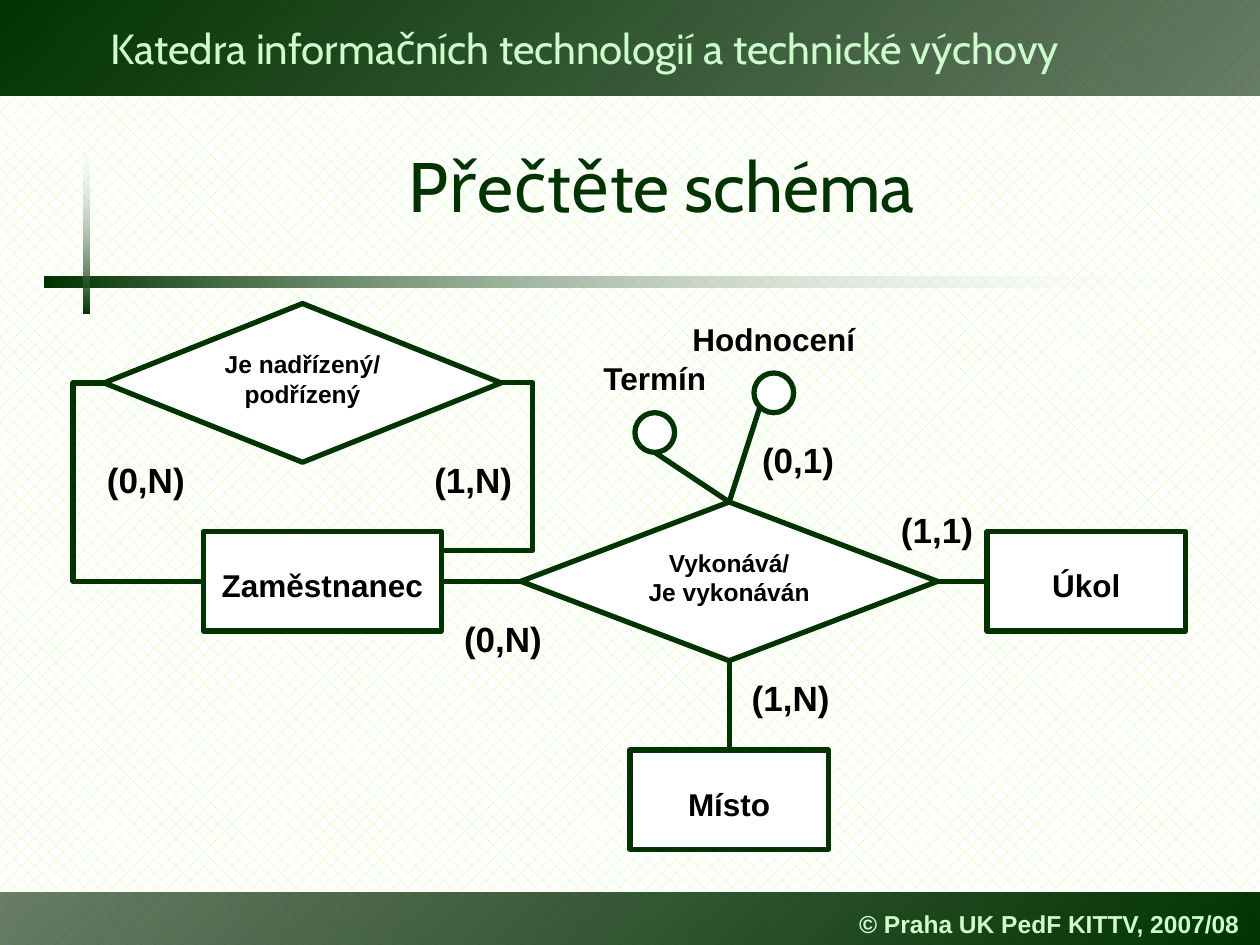
from lxml import etree
from pptx import Presentation
from pptx.dml.color import RGBColor
from pptx.enum.dml import MSO_PATTERN
from pptx.enum.shapes import MSO_CONNECTOR, MSO_SHAPE
from pptx.enum.text import MSO_ANCHOR, PP_ALIGN
from pptx.oxml import parse_xml
from pptx.oxml.ns import qn
from pptx.util import Cm, Pt

DARK, DEEP, MINT, WHITE, BLACK = "003300", "002400", "CCFFCC", "FFFFFF", "000000"
TEXT_SHADOW = (
    '<a:effectLst xmlns:a="http://schemas.openxmlformats.org/drawingml/2006/main">'
    '<a:outerShdw dist="35921" dir="2700000"><a:srgbClr val="000000"/></a:outerShdw>'
    '</a:effectLst>')


def color(hex_string):
    return RGBColor.from_string(hex_string)


def write(frame, lines, size, font="Arial", hue=BLACK, bold=True,
          align=PP_ALIGN.CENTER, anchor=MSO_ANCHOR.TOP, wrap=True):
    """Fill a text frame with one paragraph per line."""
    frame.word_wrap = wrap
    frame.vertical_anchor = anchor
    for number, line in enumerate(lines):
        paragraph = frame.add_paragraph() if number else frame.paragraphs[0]
        paragraph.alignment = align
        run = paragraph.add_run()
        run.text = line
        run.font.size, run.font.bold, run.font.name = Pt(size), bold, font
        run.font.color.rgb = color(hue)


def add_label(shapes, box, text, size, **style):
    label = shapes.add_textbox(*map(Cm, box))
    write(label.text_frame, [text], size, **style)
    return label


def add_gradient(shapes, box, stops, angle):
    """Rectangle with a two-stop gradient; stops are (hex, opacity %)."""
    band = shapes.add_shape(MSO_SHAPE.RECTANGLE, *map(Cm, box))
    band.shadow.inherit = False
    band.line.fill.background()
    band.fill.gradient()
    band.fill.gradient_angle = -angle % 360
    for stop, (hue, _) in zip(band.fill.gradient_stops, stops):
        stop.color.rgb = color(hue)
    for node, (_, opacity) in zip(band.fill._xPr.iter(qn("a:srgbClr")), stops):
        if opacity < 100:
            etree.SubElement(node, qn("a:alpha"), val=str(opacity * 1000))


def add_node(shapes, kind, box):
    node = shapes.add_shape(kind, *map(Cm, box))
    node.shadow.inherit = False
    node.fill.solid()
    node.fill.fore_color.rgb = color(WHITE)
    node.line.color.rgb = color(DARK)
    node.line.width = Pt(3)
    return node


def add_link(shapes, start, end, bend=None):
    """Straight line, or an elbow whose middle leg stands at x = bend."""
    kind = MSO_CONNECTOR.STRAIGHT if bend is None else MSO_CONNECTOR.ELBOW
    link = shapes.add_connector(kind, *map(Cm, start + end))
    link.line.color.rgb = color(DARK)
    link.line.width = Pt(3)
    properties = link._element.spPr
    etree.SubElement(properties, qn("a:effectLst"))
    if bend is not None:
        share = round((bend - start[0]) / (end[0] - start[0]) * 100000)
        guides = properties.find(qn("a:prstGeom")).get_or_add_avLst()
        etree.SubElement(guides, qn("a:gd"), name="adj1", fmla=f"val {share}")


def header(shapes, left, top, width, height):
    add_gradient(shapes, (left, top, width, height), [(DARK, 100), (DEEP, 59)], 45)
    department = add_label(
        shapes, (left + 1.98, top + 0.33, 20.5, 1.27),
        "Katedra informačních technologií a technické výchovy", 24,
        font="Cabin", hue=MINT, bold=False, align=PP_ALIGN.LEFT, wrap=False)
    run = department.text_frame.paragraphs[0].runs[0]
    run.font._element.find(qn("a:solidFill")).addnext(parse_xml(TEXT_SHADOW))


def footer(shapes, left, top, width, height):
    add_gradient(shapes, (left, top, width, height), [(DEEP, 59), (DARK, 100)], 45)
    add_label(shapes, (left + width - 8.33, top + 0.2, 8.33, 0.84),
              "© Praha UK PedF KITTV, 2007/08", 14, hue=MINT,
              align=PP_ALIGN.LEFT, anchor=MSO_ANCHOR.MIDDLE, wrap=False)


def title(shapes, left, top, width, height):
    # Crossed bars that fade out to the right and upwards
    add_gradient(shapes, (left, top + 2.88, width, 0.21), [(DARK, 100), (WHITE, 0)], 0)
    add_gradient(shapes, (left + 0.8, top, 0.11, 3.63), [(WHITE, 0), (DARK, 100)], 90)
    add_label(shapes, (left + 1.02, top - 0.57, 22.86, height), "Přečtěte schéma", 40,
              font="Cabin", hue=DARK, bold=False, anchor=MSO_ANCHOR.MIDDLE)


def diagram(shapes, left, top):
    def at(x, y):
        return left + x, top + y

    # Entities
    for x, y, width, name in [(2, 4.6, 4.8, "Zaměstnanec"), (17.8, 4.6, 4, "Úkol"),
                              (10.6, 9, 4, "Místo")]:
        entity = add_node(shapes, MSO_SHAPE.RECTANGLE, at(x, y) + (width, 2))
        entity.text_frame.margin_top = Cm(0.7)
        write(entity.text_frame, [name], 18)

    # Relationships
    for x, y, width, lines in [(0, 0, 8, ["Je nadřízený/", "podřízený"]),
                               (8.4, 4, 8.4, ["Vykonává/", "Je vykonáván"])]:
        relation = add_node(shapes, MSO_SHAPE.DIAMOND, at(x, y) + (width, 3.2))
        write(relation.text_frame, lines, 14)

    # Attributes: a name centred above a circle
    for center, y, width, name in [(11.1, 1, 2.6, "Termín"), (13.5, 0, 3.84, "Hodnocení")]:
        attribute = shapes.add_group_shape().shapes
        circle_top = 2.2 if name == "Termín" else 1.4
        add_node(attribute, MSO_SHAPE.OVAL, at(center - 0.4, circle_top) + (0.8, 0.8))
        add_label(attribute, at(center - width / 2, circle_top - 1.2) + (width, 1.02),
                  name, 18, wrap=False)

    # Links between the parts
    for start, end in [((6.8, 5.6), (8.4, 5.6)), ((16.8, 5.6), (17.8, 5.6)),
                       ((12.6, 7.2), (12.6, 9)), ((11.1, 3), (12.6, 4)),
                       ((13.22, 2.08), (12.6, 4))]:
        add_link(shapes, at(*start), at(*end))
    add_link(shapes, at(0, 1.6), at(2, 5.6), bend=left - 0.63)
    add_link(shapes, at(6.8, 4.98), at(8, 1.6), bend=left + 8.64)

    # Cardinalities
    for x, y, cardinality in [(7, 6.2, "(0,N)"), (15.75, 4, "(1,1)"), (12.95, 2.6, "(0,1)"),
                              (6.4, 3, "(1,N)"), (-0.2, 3, "(0,N)"), (12.8, 7.4, "(1,N)")]:
        add_label(shapes, at(x, y) + (2.08, 1.12), cardinality, 20, wrap=False)


def main():
    presentation = Presentation()
    presentation.slide_width, presentation.slide_height = Cm(25.4), Cm(19.05)
    slide = presentation.slides.add_slide(presentation.slide_layouts[6])
    backdrop = slide.background.fill
    backdrop.patterned()
    backdrop.pattern = MSO_PATTERN.PERCENT_25
    backdrop.fore_color.rgb = color("CCFF99")
    backdrop.back_color.rgb = color(WHITE)

    footer(slide.shapes, 0, 18, 25.4, 1.05)
    header(slide.shapes, 0, 0, 25.4, 1.93)
    title(slide.shapes, 0.89, 2.7, 24.1, 3.18)
    diagram(slide.shapes, 2.1, 6.12)
    presentation.save("out.pptx")


if __name__ == "__main__":
    main()
